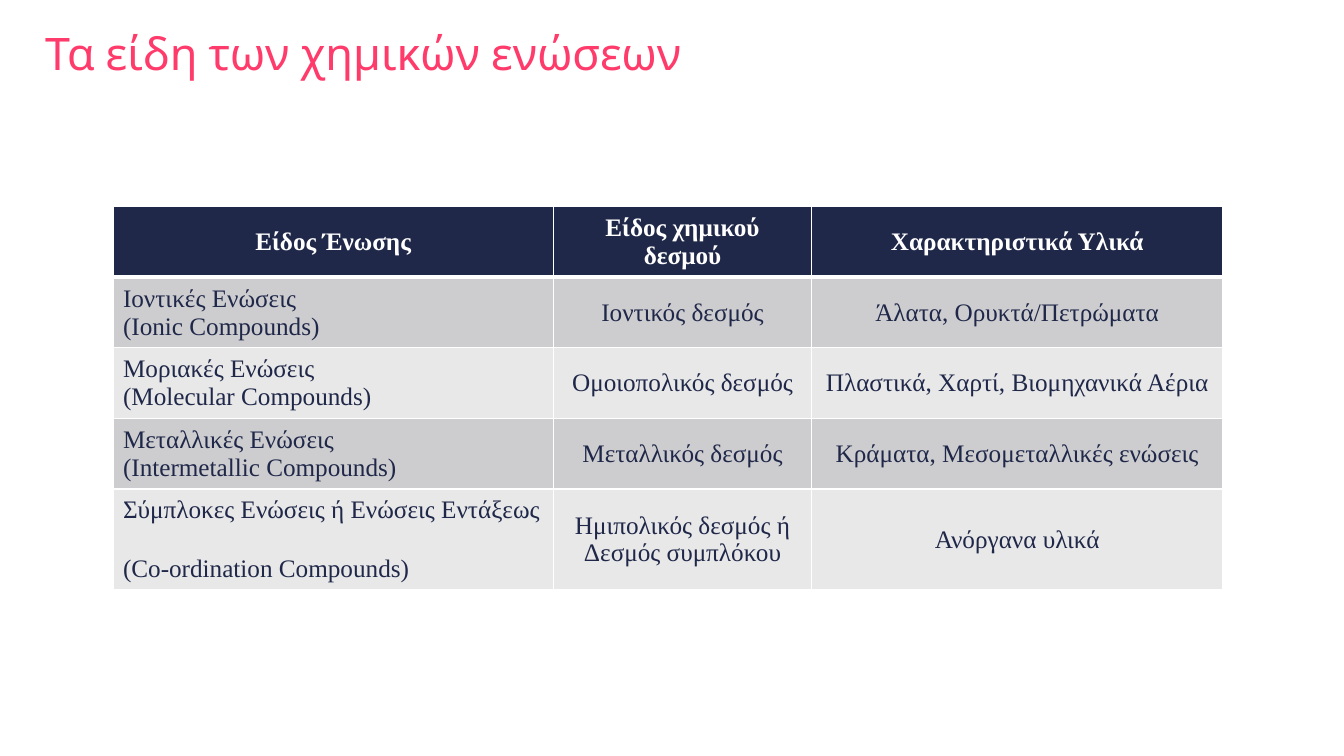
from dataclasses import dataclass
from typing import Any

from lxml import etree
from pptx import Presentation
from pptx.dml.color import RGBColor
from pptx.enum.text import MSO_ANCHOR, PP_ALIGN
from pptx.oxml.ns import qn
from pptx.util import Inches, Pt

MIDDLE = MSO_ANCHOR.MIDDLE
LEFT, CENTER = PP_ALIGN.LEFT, PP_ALIGN.CENTER


@dataclass(frozen=True)
class Theme:
    """Colours, fonts and sizes of the slide."""

    pink: str = "FF3B6B"
    navy: str = "202849"
    white: str = "FFFFFF"
    bands: tuple[str, str] = ("CDCDD0", "E8E8E9")
    title_font: str = "League Spartan"
    table_font: str = "Times New Roman"
    title_size: int = 32
    table_size: int = 18
    thin_rule: int = 1
    header_rule: int = 3


@dataclass(frozen=True)
class Compound:
    """One row: the compound, its bond and typical materials."""

    kind: str
    bond: str
    materials: str


THEME = Theme()
TITLE = "Τα είδη των χημικών ενώσεων"
HEADER = Compound("Είδος Ένωσης", "Είδος χημικού δεσμού", "Χαρακτηριστικά Υλικά")
COMPOUNDS = [
    Compound("Ιοντικές Ενώσεις \n(Ionic Compounds)", "Ιοντικός δεσμός", "Άλατα, Ορυκτά/Πετρώματα"),
    Compound("Μοριακές Ενώσεις \n(Molecular Compounds)", "Ομοιοπολικός δεσμός",
             "Πλαστικά, Χαρτί, Βιομηχανικά Αέρια"),
    Compound("Μεταλλικές Ενώσεις \n(Intermetallic Compounds)", "Μεταλλικός δεσμός",
             "Κράματα, Μεσομεταλλικές ενώσεις"),
    Compound("Σύμπλοκες Ενώσεις ή Ενώσεις Εντάξεως \n(Co-ordination Compounds)",
             "Ημιπολικός δεσμός ή Δεσμός συμπλόκου", "Ανόργανα υλικά"),
]
COLUMN_WIDTHS = (4.37, 2.56, 4.08)
ROW_HEIGHT = 0.67


def apply_format(target: Any, values: dict[str, Any]) -> None:
    """Set each named value on the target."""
    for name, value in values.items():
        setattr(target, name, value)


def write_text(paragraph: Any, text: str, color: str, font_format: dict[str, Any]) -> None:
    """Fill a paragraph with text and format its runs."""
    paragraph.text = text
    for run in paragraph.runs:
        apply_format(run.font, font_format)
        run.font.color.rgb = RGBColor.from_string(color)


def add_title(slide: Any) -> None:
    """Add the slide heading."""
    heading = slide.shapes.add_textbox(Inches(0.35), Inches(0.19), Inches(12.65), Inches(0.73))
    apply_format(heading.text_frame, {"word_wrap": True, "vertical_anchor": MIDDLE})
    paragraph = heading.text_frame.paragraphs[0]
    paragraph.line_spacing = 0.9
    write_text(paragraph, TITLE, THEME.pink,
               {"name": THEME.title_font, "size": Pt(THEME.title_size), "bold": False})


def add_borders(cell: Any, top: int, bottom: int) -> None:
    """Draw the four white rules around a cell."""
    properties = cell._tc.get_or_add_tcPr()
    widths = {"a:lnL": THEME.thin_rule, "a:lnR": THEME.thin_rule, "a:lnT": top, "a:lnB": bottom}
    for side, width in widths.items():
        rule = etree.SubElement(properties, qn(side), w=str(Pt(width)))
        fill = etree.SubElement(rule, qn("a:solidFill"))
        etree.SubElement(fill, qn("a:srgbClr"), val=THEME.white)


def add_compound_table(slide: Any) -> None:
    """Add the table of compounds, bonds and materials."""
    rows = [HEADER, *COMPOUNDS]
    table = slide.shapes.add_table(
        len(rows), len(COLUMN_WIDTHS), Inches(1.12), Inches(2.05),
        Inches(sum(COLUMN_WIDTHS)), Inches(ROW_HEIGHT * len(rows)),
    ).table
    for column, width in zip(table.columns, COLUMN_WIDTHS):
        column.width = Inches(width)
    for row_index, compound in enumerate(rows):
        is_header = row_index == 0
        table.rows[row_index].height = Inches(ROW_HEIGHT)
        background = THEME.navy if is_header else THEME.bands[(row_index - 1) % 2]
        top = THEME.header_rule if row_index == 1 else THEME.thin_rule
        bottom = THEME.header_rule if is_header else THEME.thin_rule
        font_format = {"name": THEME.table_font, "size": Pt(THEME.table_size), "bold": is_header}
        for column_index, text in enumerate((compound.kind, compound.bond, compound.materials)):
            cell = table.cell(row_index, column_index)
            cell.vertical_anchor = MIDDLE
            add_borders(cell, top, bottom)
            cell.fill.solid()
            cell.fill.fore_color.rgb = RGBColor.from_string(background)
            paragraph = cell.text_frame.paragraphs[0]
            paragraph.alignment = CENTER if is_header or column_index else LEFT
            write_text(paragraph, text, THEME.white if is_header else THEME.navy, font_format)


def main() -> None:
    """Build and save the slide."""
    presentation = Presentation()
    apply_format(presentation, {"slide_width": Inches(13.33), "slide_height": Inches(7.5)})
    slide = presentation.slides.add_slide(presentation.slide_layouts[6])
    add_title(slide)
    add_compound_table(slide)
    presentation.save("out.pptx")


if __name__ == "__main__":
    main()
